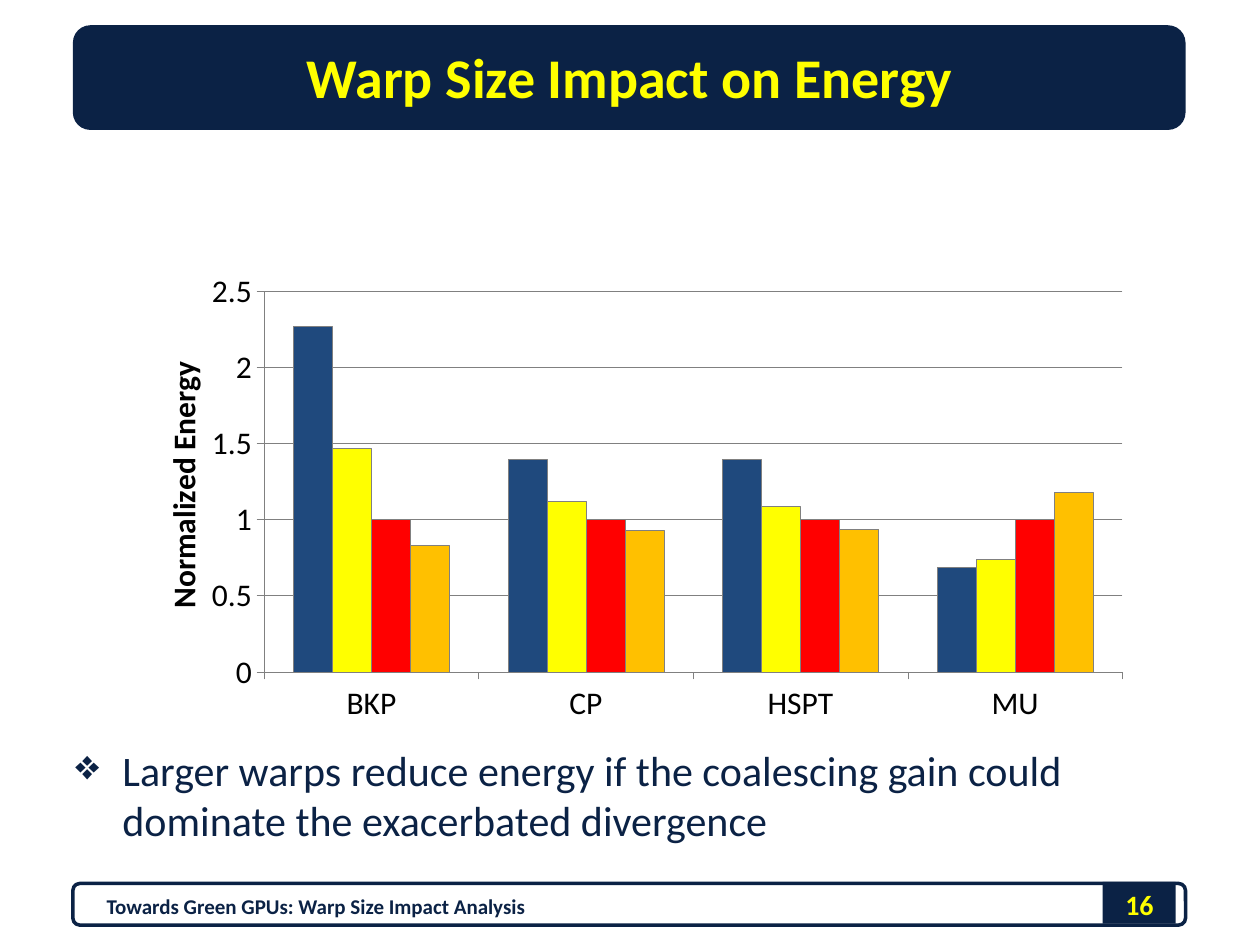
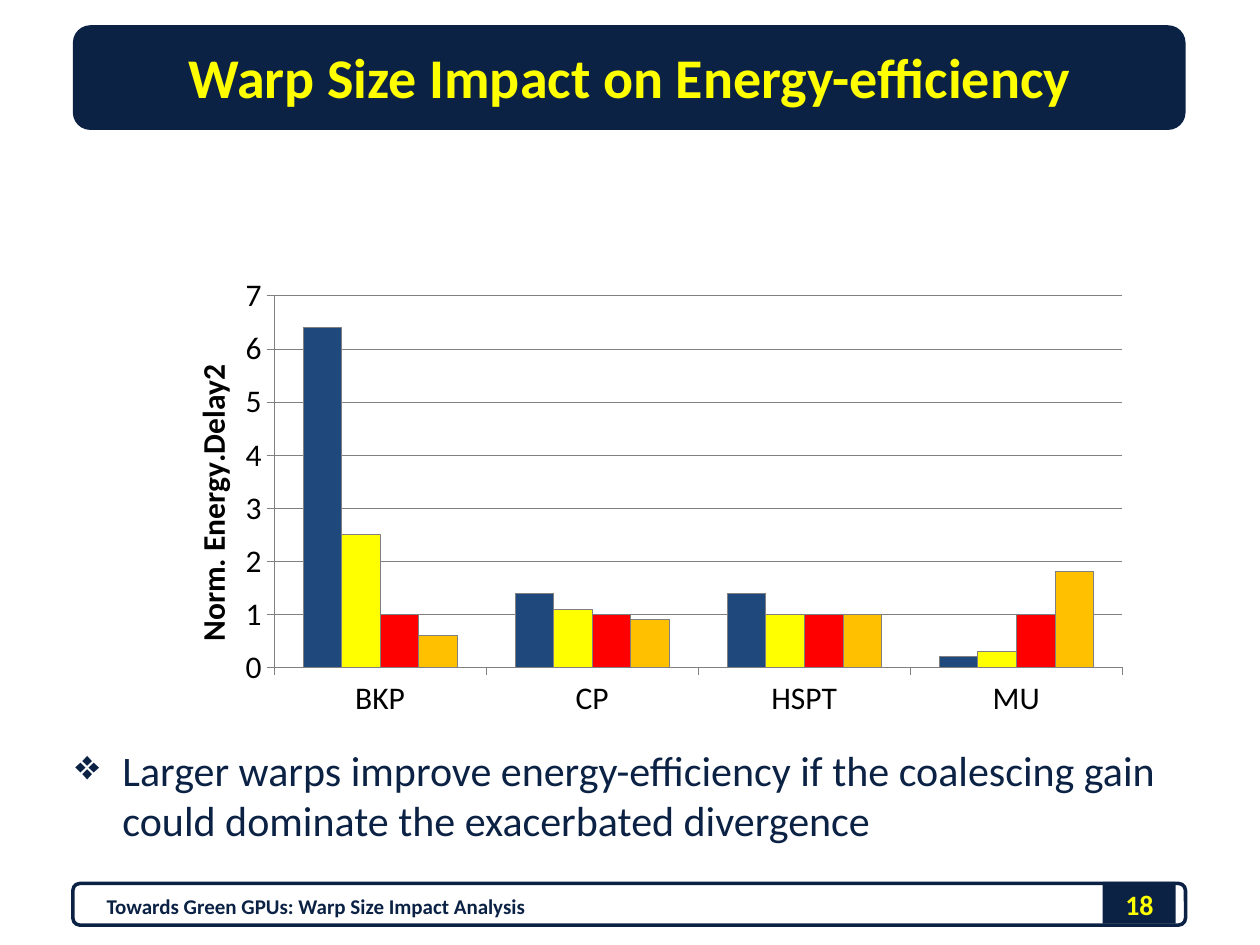
import dataclasses
import lxml.etree
import pptx
import pptx.chart.data
import pptx.dml.color
import pptx.enum.chart
import pptx.enum.shapes
import pptx.enum.text
import pptx.oxml
import pptx.oxml.ns
import pptx.util

Cm = pptx.util.Cm
Pt = pptx.util.Pt
Shape = pptx.enum.shapes.MSO_SHAPE
Align = pptx.enum.text.PP_ALIGN
Tick = pptx.enum.chart.XL_TICK_MARK

FONT = "Calibri"
COLORS = {
    "navy": "0B2245",
    "yellow": "FFFF00",
    "black": "000000",
    "grey": "808080",
    "white": "FFFFFF",
}
WARP_COLORS = {"8": "1F497D", "16": "FFFF00", "32": "FF0000", "64": "FFC000"}
BENCHMARKS = ["BKP", "CP", "HSPT", "MU"]
FOOTER_TEXT = "Towards Green GPUs: Warp Size Impact Analysis"


@dataclasses.dataclass
class Box:
    left: float
    top: float
    width: float
    height: float

    def inner(self, left, top, width, height):
        return Box(self.left + left, self.top + top, width, height)

    def lengths(self):
        return Cm(self.left), Cm(self.top), Cm(self.width), Cm(self.height)


HEADER = Box(1.27, 0.43, 22.86, 2.21)
FOOTER = Box(1.47, 17.73, 22.43, 1.02)
MESSAGE = Box(1.27, 14.88, 22.86, 2.69)


def rgb(hex_color):
    return pptx.dml.color.RGBColor.from_string(hex_color)


def style_font(font, size, color, bold=False):
    font.name = FONT
    font.size = Pt(size)
    font.bold = bold
    font.color.rgb = rgb(color)


def style_line(line, color, width):
    line.color.rgb = rgb(color)
    line.width = Pt(width)


def add_panel(page, box, kind, filled=True):
    panel = page.shapes.add_shape(kind, *box.lengths())
    panel.shadow.inherit = False
    if filled:
        panel.fill.solid()
        panel.fill.fore_color.rgb = rgb(COLORS["navy"])
        panel.line.fill.background()
    else:
        panel.fill.background()
        style_line(panel.line, COLORS["navy"], 2)


def add_text(page, box, text, size, color, bold=True, align=Align.LEFT,
             anchor=pptx.enum.text.MSO_ANCHOR.MIDDLE):
    frame = page.shapes.add_textbox(*box.lengths()).text_frame
    frame.word_wrap = True
    frame.vertical_anchor = anchor
    frame.text = text
    para = frame.paragraphs[0]
    para.alignment = align
    style_font(para.runs[0].font, size, COLORS[color], bold)
    return para


def add_header(page, box, title):
    add_panel(page, box.inner(0.2, 0.08, 22.43, 2.11), Shape.ROUNDED_RECTANGLE)
    add_text(page, box, title, 32, "yellow", align=Align.CENTER)


def add_footer(page, box, number):
    add_panel(page, box.inner(20.76, 0.05, 1.47, 0.84), Shape.RECTANGLE)
    add_panel(page, box.inner(0, 0.08, box.width, 0.84),
              Shape.ROUNDED_RECTANGLE, filled=False)
    add_text(page, box.inner(20.55, 0, 1.9, box.height), str(number), 16,
             "yellow", align=Align.CENTER)
    add_text(page, box.inner(0.43, 0.02, 14.17, box.height), FOOTER_TEXT, 12, "navy")


def add_message(page, box, text):
    para = add_text(page, box, text, 24, "navy", bold=False,
                    anchor=pptx.enum.text.MSO_ANCHOR.TOP)
    properties = para._p.get_or_add_pPr()
    properties.set("marL", str(Cm(0.95)))
    properties.set("indent", str(-Cm(0.95)))
    bullet = lxml.etree.SubElement(properties, pptx.oxml.ns.qn("a:buChar"))
    bullet.set("char", "❖")


def manual_layout(positions, target=None):
    parts = [("layoutTarget", target)] if target else []
    parts += [("xMode", "edge"), ("yMode", "edge"), *positions.items()]
    children = "".join(f'<c:{name} val="{value}"/>' for name, value in parts)
    return pptx.oxml.parse_xml(
        f'<c:layout {pptx.oxml.ns.nsdecls("c")}>'
        f"<c:manualLayout>{children}</c:manualLayout></c:layout>")


def set_layout(element, layout, index):
    for existing in element.findall(pptx.oxml.ns.qn("c:layout")):
        element.remove(existing)
    element.insert(index, layout)


def style_axes(chart, axis_title, title_place, maximum, step):
    for axis in (chart.category_axis, chart.value_axis):
        axis.major_tick_mark = Tick.OUTSIDE
        axis.minor_tick_mark = Tick.NONE
        style_line(axis.format.line, COLORS["grey"], 0.25)
        style_font(axis.tick_labels.font, 18, COLORS["black"])
    chart.category_axis.has_major_gridlines = False
    values = chart.value_axis
    values.minimum_scale = 0
    values.maximum_scale = maximum
    values.major_unit = step
    values.has_major_gridlines = True
    style_line(values.major_gridlines.format.line, COLORS["grey"], 0.25)
    frame = values.axis_title.text_frame
    frame.text = axis_title
    style_font(frame.paragraphs[0].runs[0].font, 18, COLORS["black"], True)
    frame._txBody.bodyPr.set("rot", "-5400000")
    frame._txBody.bodyPr.set("vert", "horz")
    set_layout(values.axis_title._element, manual_layout(title_place), 1)


def add_warp_chart(page, box, axis_title, title_place, plot, maximum, step, rows):
    data = pptx.chart.data.CategoryChartData()
    data.categories = BENCHMARKS
    for warp_size, row in zip(WARP_COLORS, rows):
        data.add_series(warp_size, row)
    chart = page.shapes.add_chart(
        pptx.enum.chart.XL_CHART_TYPE.COLUMN_CLUSTERED, *box.lengths(), data).chart
    chart.has_legend = False
    chart.has_title = False
    style_font(chart.font, 18, COLORS["black"])
    bars = chart.plots[0]
    bars.vary_by_categories = False
    bars.gap_width = 150
    bars.overlap = 0
    for series, color in zip(bars.series, WARP_COLORS.values()):
        series.format.fill.solid()
        series.format.fill.fore_color.rgb = rgb(color)
        style_line(series.format.line, COLORS["grey"], 0.25)
    style_axes(chart, axis_title, title_place, maximum, step)
    set_layout(chart._chartSpace.chart.plotArea, manual_layout(plot, "inner"), 0)


def add_result_page(deck, number, title, message, chart_box, **chart_options):
    page = deck.slides.add_slide(deck.slide_layouts[6])
    page.background.fill.solid()
    page.background.fill.fore_color.rgb = rgb(COLORS["white"])
    add_header(page, HEADER, title)
    add_message(page, MESSAGE, message)
    add_footer(page, FOOTER, number)
    add_warp_chart(page, chart_box, **chart_options)


def main():
    deck = pptx.Presentation()
    deck.slide_width = Cm(25.4)
    deck.slide_height = Cm(19.05)
    add_result_page(
        deck, 16, "Warp Size Impact on Energy",
        "Larger warps reduce energy if the coalescing gain could dominate "
        "the exacerbated divergence",
        Box(2.74, 5.08, 19.89, 9.96),
        axis_title="Normalized Energy",
        title_place={"x": 0.02, "y": 0.21},
        plot={"x": 0.13, "y": 0.08, "w": 0.87, "h": 0.77},
        maximum=2.5, step=0.5,
        rows=[(2.27, 1.4, 1.4, 0.69), (1.47, 1.12, 1.09, 0.74),
              (1, 1, 1, 1), (0.83, 0.93, 0.94, 1.18)])
    add_result_page(
        deck, 18, "Warp Size Impact on Energy-efficiency",
        "Larger warps improve energy-efficiency if the coalescing gain could "
        "dominate the exacerbated divergence",
        Box(2.74, 5.28, 19.89, 9.73),
        axis_title="Norm. Energy.Delay2",
        title_place={"x": 0.05, "y": 0.2},
        plot={"x": 0.14, "y": 0.07, "w": 0.86, "h": 0.77},
        maximum=7, step=1,
        rows=[(6.4, 1.4, 1.4, 0.2), (2.5, 1.1, 1, 0.3),
              (1, 1, 1, 1), (0.6, 0.9, 1, 1.8)])
    deck.save("out.pptx")


if __name__ == "__main__":
    main()
